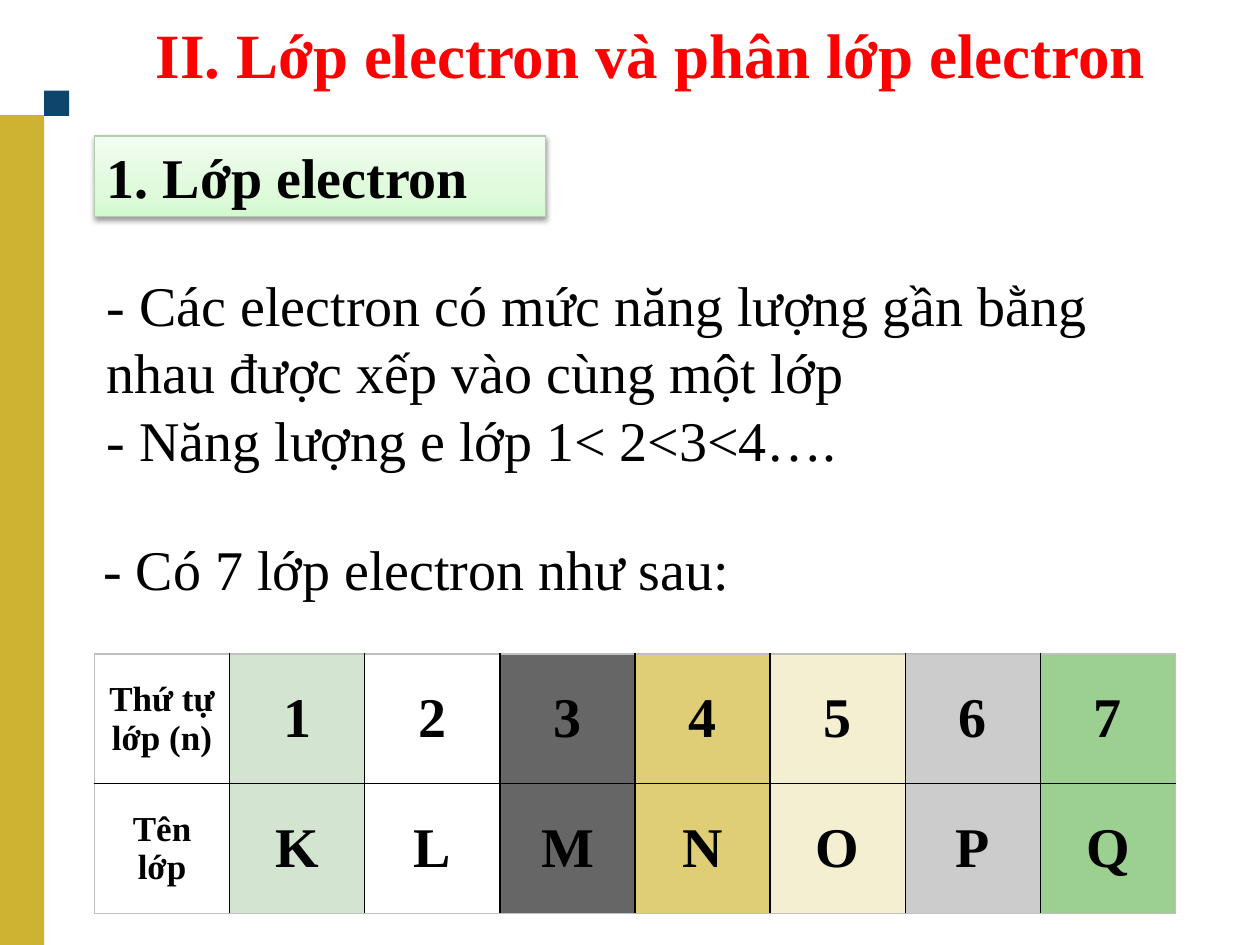
from copy import deepcopy

from lxml import etree
from pptx import Presentation, util as u
from pptx.dml.color import RGBColor
from pptx.enum import shapes, text
from pptx.oxml.ns import qn

COLORS = {
    "gold": "CDB331", "navy": "0D466D", "red": "FF0000", "black": "000000",
    "mint": "D3F8CF", "pale_mint": "E0FADC", "white_mint": "F2FEF1",
    "mint_edge": "B0CFAC", "grid_edge": "BFBFBF",
}
LAYERS = [  # number, name, column fill
    ("1", "K", "D3E5D0"), ("2", "L", "FFFFFF"), ("3", "M", "666666"),
    ("4", "N", "DFCE76"), ("5", "O", "F4EFD1"), ("6", "P", "CCCCCC"),
    ("7", "Q", "9BD091"),
]


def rgb(name):
    return RGBColor.from_string(COLORS.get(name, name))


def add_color(parent, name):
    return etree.SubElement(parent, qn("a:srgbClr"), val=COLORS[name])


class SlideBuilder:
    """Places elements by percent of the slide's width and height."""

    font = {"name": "Times New Roman", "bold": False, "size": u.Pt(32)}

    def __init__(self, presentation):
        self.width = presentation.slide_width
        self.height = presentation.slide_height
        self.slide = presentation.slides.add_slide(presentation.slide_layouts[5])

    def box(self, left, top, width, height):
        return [round(share * side / 100) for share, side in
                zip((left, top, width, height), (self.width, self.height) * 2)]

    def add_lines(self, frame, lines, color="black", align=text.PP_ALIGN.LEFT, **font):
        for index, line in enumerate(lines):
            paragraph = frame.add_paragraph() if index else frame.paragraphs[0]
            paragraph.alignment = align
            run = paragraph.add_run()
            run.text = line
            for key, value in {**self.font, **font}.items():
                setattr(run.font, key, value)
            run.font.color.rgb = rgb(color)

    def title(self, place, line, **style):
        shape = self.slide.shapes.title
        shape.left, shape.top, shape.width, shape.height = self.box(*place)
        shape.text_frame.auto_size = text.MSO_AUTO_SIZE.NONE
        shape.text_frame.vertical_anchor = text.MSO_ANCHOR.MIDDLE
        self.add_lines(shape.text_frame, [line], align=text.PP_ALIGN.CENTER, **style)

    def rectangle(self, place, color):
        shape = self.slide.shapes.add_shape(
            shapes.MSO_SHAPE.RECTANGLE, *self.box(*place))
        shape.shadow.inherit = False
        shape.fill.solid()
        shape.fill.fore_color.rgb = rgb(color)
        shape.line.fill.background()
        return shape

    def text_box(self, place, lines):
        shape = self.slide.shapes.add_textbox(*self.box(*place))
        self.format_frame(shape.text_frame)
        self.add_lines(shape.text_frame, lines)

    def format_frame(self, frame):
        settings = {"word_wrap": True, "vertical_anchor": text.MSO_ANCHOR.TOP,
                    "auto_size": text.MSO_AUTO_SIZE.SHAPE_TO_FIT_TEXT}
        for key, value in settings.items():
            setattr(frame, key, value)

    def heading(self, place, line):
        shape = self.rectangle(place, "mint")
        shape.line.color.rgb = rgb("mint_edge")
        shape.line.width = u.Pt(0.75)
        # Three-stop gradient, running upwards
        shape.fill.gradient()
        shape.fill.gradient_angle = 90
        stop_list = shape._element.spPr.find(".//" + qn("a:gsLst"))
        stop_list.append(deepcopy(stop_list[0]))
        stops = [(0, "mint"), (0.35, "pale_mint"), (1, "white_mint")]
        for stop, (position, color) in zip(shape.fill.gradient_stops, stops):
            stop.position = position
            stop.color.rgb = rgb(color)
        # Soft shadow below
        effects = shape._element.spPr.find(qn("a:effectLst"))
        shadow = etree.SubElement(
            effects, qn("a:outerShdw"), blurRad=str(u.Pt(3.1)),
            dist=str(u.Pt(1.6)), dir="5400000", rotWithShape="0")
        etree.SubElement(add_color(shadow, "black"), qn("a:alpha"), val="38000")
        self.format_frame(shape.text_frame)
        self.add_lines(shape.text_frame, [line], bold=True)

    def borders(self, cell, outer):
        properties = cell._tc.get_or_add_tcPr()
        for index, side in enumerate("LRTB"):
            line = etree.Element(qn("a:ln" + side), w=str(u.Pt(1)))
            fill = etree.SubElement(line, qn("a:solidFill"))
            add_color(fill, "grid_edge" if side in outer else "black")
            properties.insert(index, line)

    def table(self, place, rows, fills):
        count, last = len(fills), len(rows) - 1
        table = self.slide.shapes.add_table(
            len(rows), count, *self.box(*place)).table
        table.first_row = table.horz_banding = False
        for row, values in enumerate(rows):
            for column, (value, fill) in enumerate(zip(values, fills)):
                cell = table.cell(row, column)
                cell.vertical_anchor = text.MSO_ANCHOR.MIDDLE
                if fill:
                    cell.fill.solid()
                    cell.fill.fore_color.rgb = rgb(fill)
                else:
                    cell.fill.background()
                edges = {"L": column == 0, "R": column == count - 1,
                         "T": row == 0, "B": row == last}
                self.borders(cell, [side for side, on in edges.items() if on])
                self.add_lines(cell.text_frame, [value], bold=True,
                               align=text.PP_ALIGN.CENTER,
                               size=u.Pt(32 if column else 20))


presentation = Presentation()
presentation.slide_width = u.Inches(10)
presentation.slide_height = u.Inches(7.5)
builder = SlideBuilder(presentation)

# Side decoration
builder.rectangle((0, 12.2, 3.5, 87.8), "gold")
builder.rectangle((3.5, 9.6, 2, 2.67), "navy")

# Title and section heading
builder.title((10.8, 0.13, 81.7, 11.07), "II. Lớp electron và phân lớp electron",
              color="red", size=u.Pt(36), bold=True)
builder.heading((7.5, 14.4, 35.8, 8.53), "1. Lớp electron")

# Statements
builder.text_box((7.5, 28, 88.3, 22.93), [
    "- Các electron có mức năng lượng gần bằng nhau được xếp vào cùng một lớp",
    "- Năng lượng e lớp 1< 2<3<4…."])
builder.text_box((7.2, 55.87, 53.6, 8.53), ["- Có 7 lớp electron như sau:"])

# Table of layers
numbers, names, fills = zip(*LAYERS)
builder.table((7.5, 69.2, 85.8, 27.47),
              [("Thứ tự lớp (n)", *numbers), ("Tên lớp", *names)],
              (None, *fills))

presentation.save("out.pptx")
